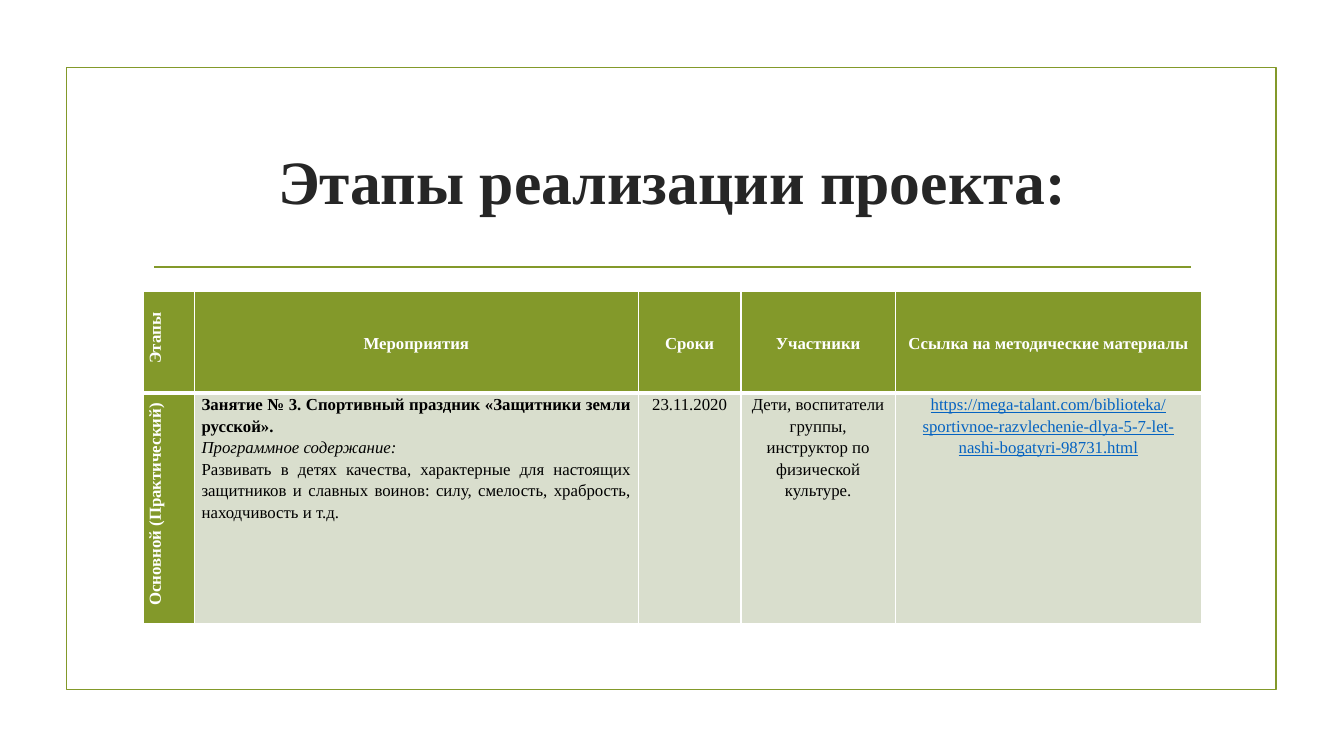
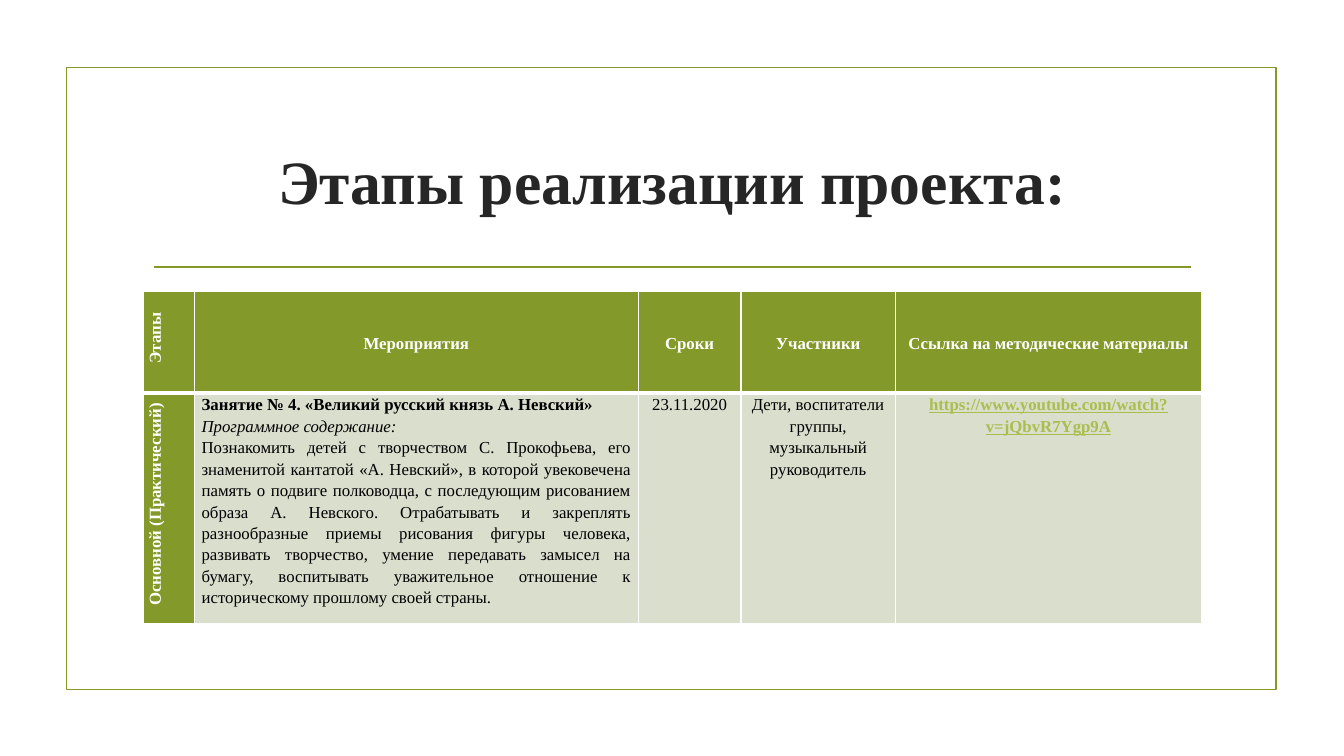
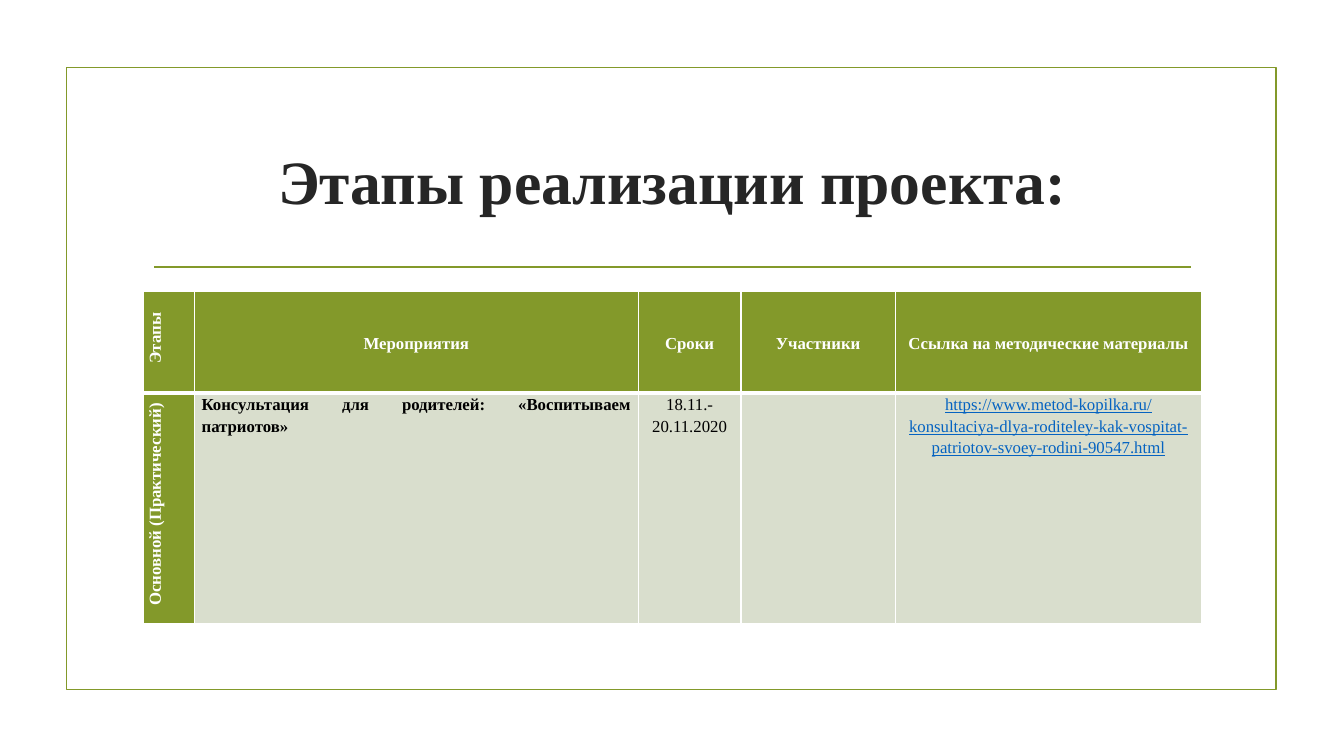
from lxml import etree
from pptx import Presentation
from pptx import util as u
from pptx.dml.color import RGBColor
from pptx.enum import shapes, text
from pptx.oxml import ns

# Content
TITLE = "Этапы реализации проекта:"
HEADINGS = ["Этапы", "Мероприятия", "Сроки", "Участники", "Ссылка на методические материалы"]
STAGE = "Основной (Практический)"
AIM = ("Программное содержание:", "aim")

# One entry per slide; each paragraph is (text, style)
ACTIVITIES = [
    {
        "activity": [
            ("Занятие № 3. Спортивный праздник «Защитники земли русской».", "topic"),
            AIM,
            ("Развивать в детях качества, характерные для настоящих защитников и славных воинов: "
             "силу, смелость, храбрость, находчивость и т.д.", "body"),
        ],
        "dates": "23.11.2020",
        "people": "Дети, воспитатели группы, инструктор по физической культуре.",
        "source": ("https://mega-talant.com/biblioteka/"
                   "sportivnoe-razvlechenie-dlya-5-7-let-nashi-bogatyri-98731.html", "link"),
    },
    {
        "activity": [
            ("Занятие № 4. «Великий русский князь А. Невский»", "topic"),
            AIM,
            ("Познакомить детей с творчеством С. Прокофьева, его знаменитой кантатой «А. Невский», "
             "в которой увековечена память о подвиге полководца, с последующим рисованием образа "
             "А. Невского. Отрабатывать и закреплять разнообразные приемы рисования фигуры человека, "
             "развивать творчество, умение передавать замысел на бумагу, воспитывать уважительное "
             "отношение к историческому прошлому своей страны.", "body"),
        ],
        "dates": "23.11.2020",
        "people": "Дети, воспитатели группы, музыкальный руководитель",
        "source": ("https://www.youtube.com/watch?v=jQbvR7Ygp9A", "bright_link"),
    },
    {
        "activity": [("Консультация для родителей: «Воспитываем патриотов»", "topic")],
        "dates": "18.11.-20.11.2020",
        "people": "",
        "source": ("https://www.metod-kopilka.ru/"
                   "konsultaciya-dlya-roditeley-kak-vospitat-patriotov-svoey-rodini-90547.html", "link"),
    },
]

# Theme
OLIVE, PALE, WHITE, BLACK = "83992A", "D9DECD", "FFFFFF", "000000"
THEME = {
    "font": "Times New Roman",
    "line_width": 1.25,
    "grid": 1,
    "header_rule": 3,
    "leading": 1.15,
    "styles": {
        "title": {"size": 44, "color": "262626", "bold": True},
        "heading": {"size": 12, "color": WHITE, "bold": True},
        "topic": {"size": 12, "color": BLACK, "bold": True},
        "aim": {"size": 12, "color": BLACK, "italic": True},
        "body": {"size": 12, "color": BLACK},
        "link": {"size": 12, "color": "0563C1", "underline": True},
        "bright_link": {"size": 12, "color": "A8BF4D", "bold": True, "underline": True},
    },
}
CENTER, JUSTIFY = text.PP_ALIGN.CENTER, text.PP_ALIGN.JUSTIFY

# Layout in px, 100 px to the inch
PX = 9144
SLIDE = (1333, 750)
FRAME = (66, 67, 1200, 617)
RULE = (153, 265, 1181, 265)
TITLE_BOX = (142, 107, 1050, 143)
COLUMNS = [51, 440, 102, 153, 304]
ROWS = [101, 229]
TABLE_BOX = (142, 289, sum(COLUMNS), sum(ROWS))
CELL_PAD, STAGE_INDENT = 7, 8


def px(lengths):
    return [u.Emu(length * PX) for length in lengths]


def write(paragraph, words, style, align):
    paragraph.alignment = align
    run = paragraph.add_run()
    run.text = words
    look = dict(THEME["styles"][style], name=THEME["font"])
    run.font.color.rgb = RGBColor.from_string(look.pop("color"))
    look["size"] = u.Pt(look["size"])
    for attribute, value in look.items():
        setattr(run.font, attribute, value)


def add_border(cell, widths):
    """Draw white sides; widths are points in the order L, R, T, B."""
    properties = cell._tc.get_or_add_tcPr()
    for place, (side, width) in enumerate(zip("LRTB", widths)):
        line = etree.Element(ns.qn(f"a:ln{side}"), w=str(u.Pt(width)))
        fill = etree.SubElement(line, ns.qn("a:solidFill"))
        etree.SubElement(fill, ns.qn("a:srgbClr"), val=WHITE)
        properties.insert(place, line)


def fill_cell(cell, paragraphs, align, color, anchor, sideways):
    margins = {"margin_left": CELL_PAD, "margin_right": CELL_PAD, "margin_top": 0, "margin_bottom": 0}
    for attribute, value in margins.items():
        setattr(cell, attribute, u.Emu(value * PX))
    cell.vertical_anchor = anchor
    cell.fill.solid()
    cell.fill.fore_color.rgb = RGBColor.from_string(color)
    for index, (words, style) in enumerate(paragraphs):
        paragraph = cell.text_frame.add_paragraph() if index else cell.text_frame.paragraphs[0]
        paragraph.line_spacing = THEME["leading"]
        if sideways:
            paragraph._p.get_or_add_pPr().set("marL", str(STAGE_INDENT * PX))
        write(paragraph, words, style, align)
    if sideways:
        cell._tc.get_or_add_tcPr().set("vert", "vert270")


def add_frame(slide):
    """Outline and the rule under the title, the same on every slide."""
    frame = slide.shapes.add_shape(shapes.MSO_SHAPE.RECTANGLE, *px(FRAME))
    frame.shadow.inherit = False
    frame.fill.background()
    rule = slide.shapes.add_connector(shapes.MSO_CONNECTOR.STRAIGHT, *px(RULE))
    etree.SubElement(rule._element.spPr, ns.qn("a:effectLst"))
    for outline in (frame.line, rule.line):
        outline.color.rgb = RGBColor.from_string(OLIVE)
        outline.width = u.Pt(THEME["line_width"])


def add_title(slide):
    title = slide.shapes.title
    title.left, title.top, title.width, title.height = px(TITLE_BOX)
    title.text_frame.vertical_anchor = text.MSO_ANCHOR.MIDDLE
    write(title.text_frame.paragraphs[0], TITLE, "title", CENTER)


def add_plan(slide, entry):
    plan = slide.shapes.add_table(len(ROWS), len(COLUMNS), *px(TABLE_BOX)).table
    plan.first_row = plan.horz_banding = False
    for column, width in zip(plan.columns, px(COLUMNS)):
        column.width = width
    for row, height in zip(plan.rows, px(ROWS)):
        row.height = height

    people = [(entry["people"], "body")] if entry["people"] else []
    grid = [
        [[(heading, "heading")] for heading in HEADINGS],
        [[(STAGE, "heading")], entry["activity"], [(entry["dates"], "body")], people, [entry["source"]]],
    ]
    thin, thick = THEME["grid"], THEME["header_rule"]
    for r, row in enumerate(grid):
        for c, paragraphs in enumerate(row):
            header, stage = r == 0, c == 0
            cell = plan.cell(r, c)
            fill_cell(
                cell, paragraphs,
                align=JUSTIFY if r == 1 and c == 1 else CENTER,
                color=OLIVE if header or stage else PALE,
                anchor=text.MSO_ANCHOR.MIDDLE if header and not stage else text.MSO_ANCHOR.TOP,
                sideways=stage,
            )
            add_border(cell, (thin, thin, thin, thick) if header else (thin, thin, thick, thin))


def main():
    deck = Presentation()
    deck.slide_width, deck.slide_height = px(SLIDE)
    title_only = deck.slide_layouts[5]
    for entry in ACTIVITIES:
        slide = deck.slides.add_slide(title_only)
        add_frame(slide)
        add_title(slide)
        add_plan(slide, entry)
    deck.save("out.pptx")


if __name__ == "__main__":
    main()
